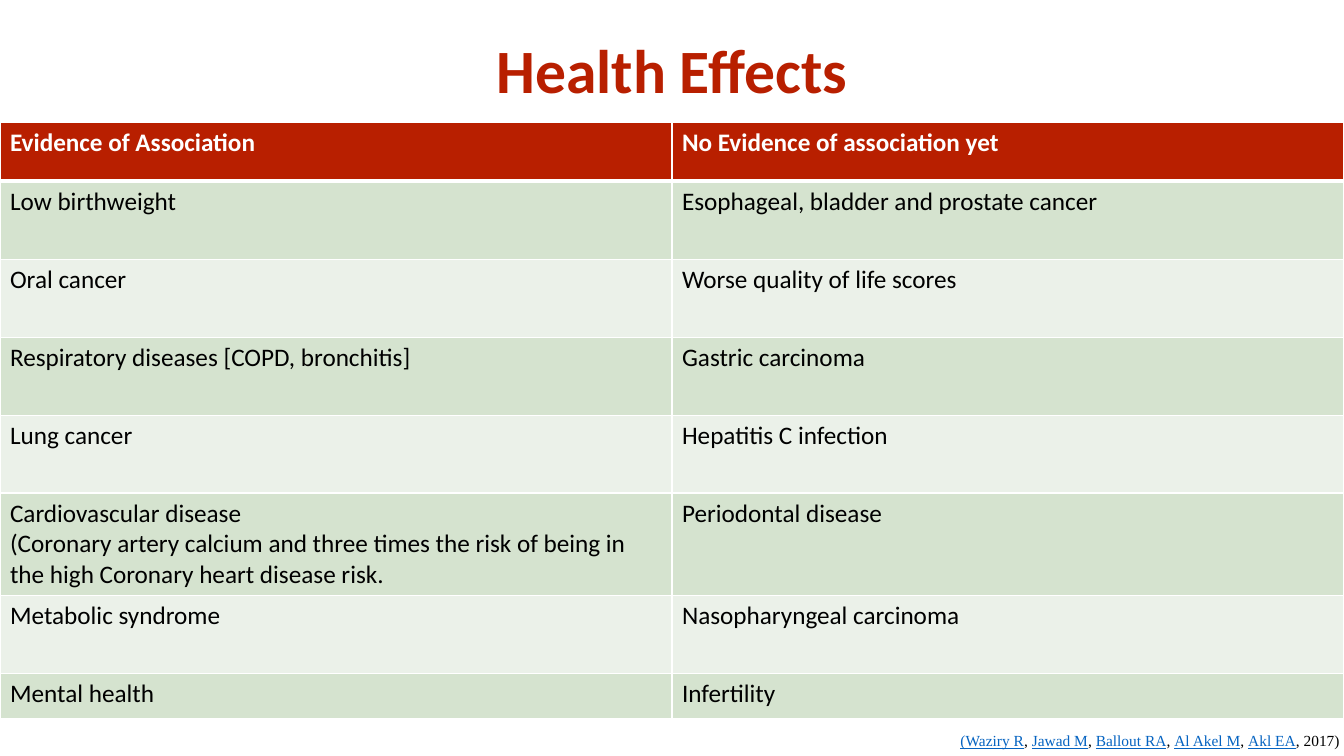
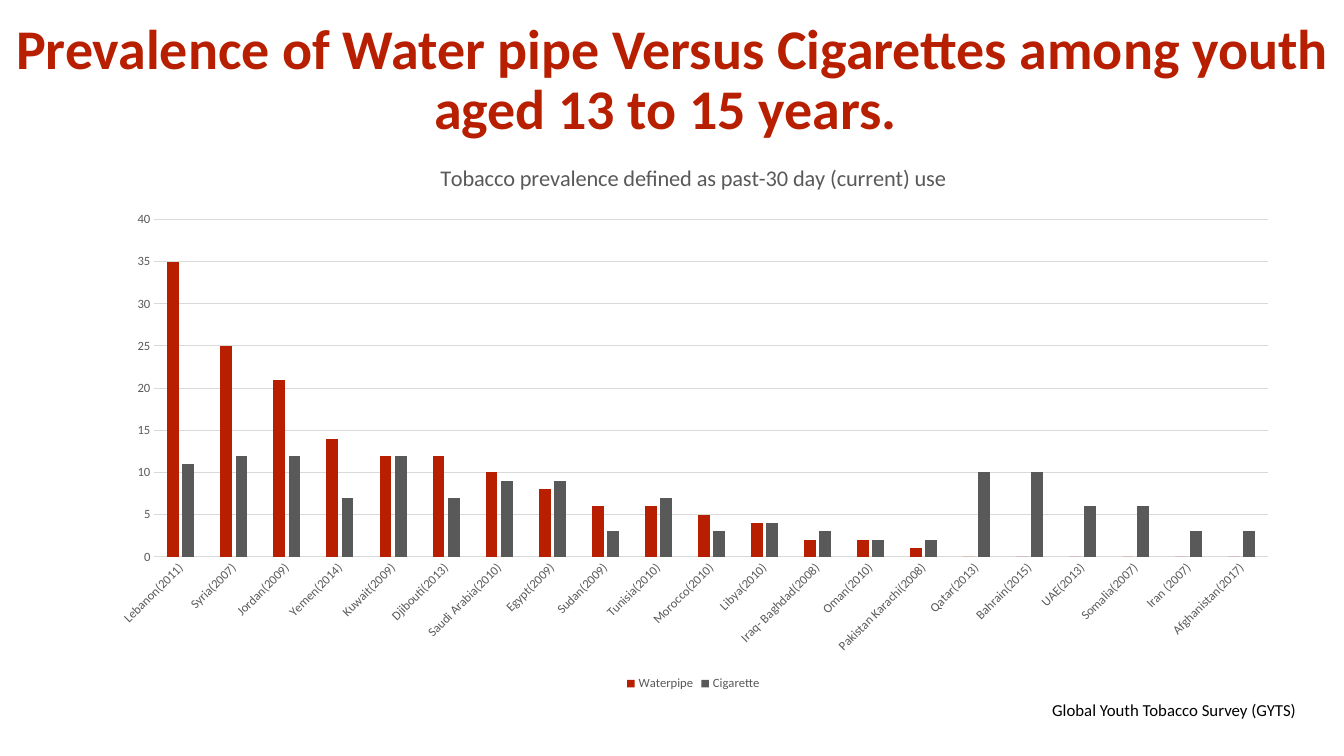
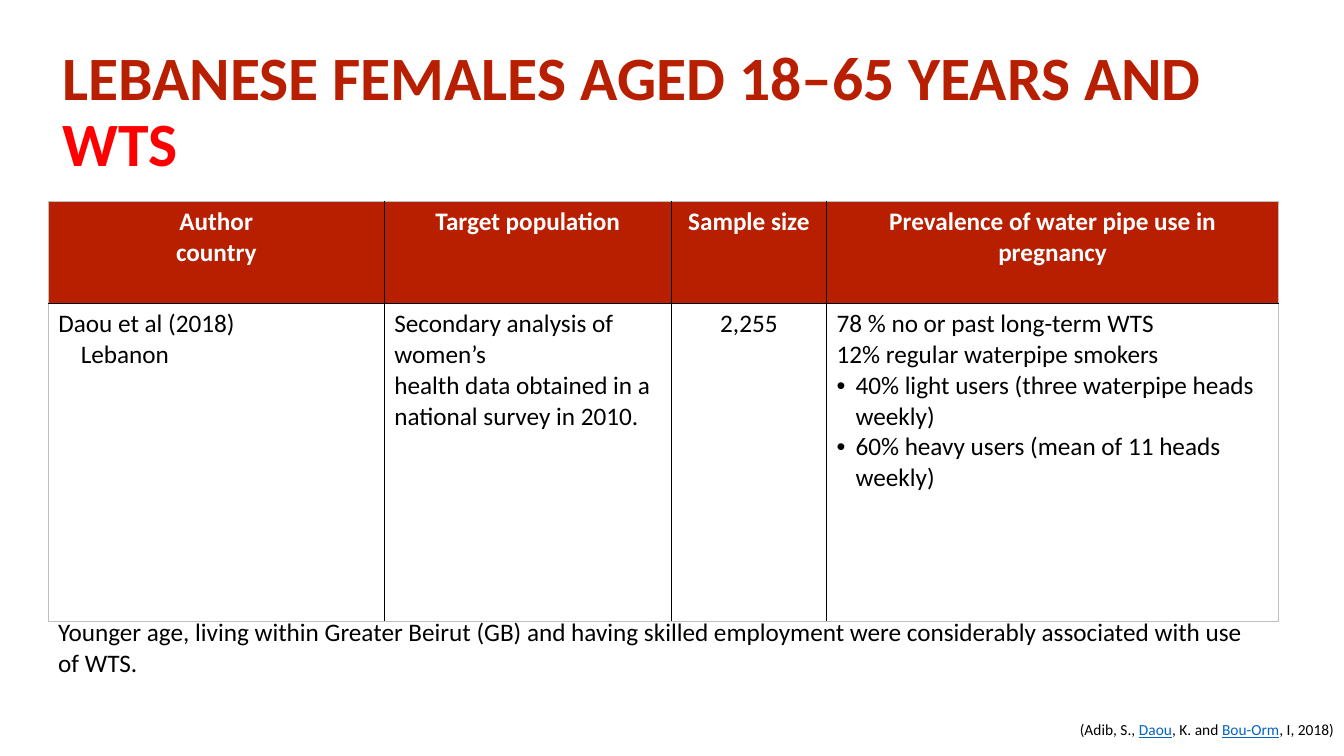
from lxml.etree import SubElement
from pptx import Presentation
from pptx.chart.data import CategoryChartData
from pptx.dml.color import RGBColor
from pptx.enum.chart import XL_CHART_TYPE as ChartType
from pptx.enum.chart import XL_LEGEND_POSITION as LegendPosition
from pptx.enum.chart import XL_TICK_MARK as TickMark
from pptx.enum.text import MSO_ANCHOR as Anchor
from pptx.enum.text import PP_ALIGN as Align
from pptx.oxml import parse_xml
from pptx.oxml.ns import nsdecls, qn
from pptx.util import Pt

COLORS = {
    "brand": "B81F00", "alert": "FF0000", "link": "0563C1",
    "text": "000000", "white": "FFFFFF", "gray": "595959",
    "grid": "D9D9D9", "frame": "BFBFBF",
    "band_dark": "D5E3CF", "band_light": "EBF1E9",
}
FONT, SERIF = "Calibri", "Times New Roman"
SLIDE_WIDTH, SLIDE_HEIGHT = 960, 540
TITLE_HEIGHT = 104.4

EFFECTS = [
    ("Evidence of Association", "No Evidence of association yet"),
    ("Low birthweight", "Esophageal, bladder and prostate cancer"),
    ("Oral cancer", "Worse quality of life scores"),
    ("Respiratory diseases [COPD, bronchitis]", "Gastric carcinoma"),
    ("Lung cancer", "Hepatitis C infection"),
    ("Cardiovascular disease\n(Coronary artery calcium and three times the risk "
     "of being in the high Coronary heart disease risk.", "Periodontal disease"),
    ("Metabolic syndrome", "Nasopharyngeal carcinoma"),
    ("Mental health", "Infertility"),
]
STUDY = [
    ("Author\ncountry", "Target population", "Sample size",
     "Prevalence of water pipe use in pregnancy"),
    ("Daou et al (2018)\nLebanon",
     "Secondary analysis of women’s\n"
     "health data obtained in a national survey in 2010.",
     "2,255",
     "78 % no or past long-term WTS\n12% regular waterpipe smokers\n"
     "40% light users (three waterpipe heads weekly)\n"
     "60% heavy users (mean of 11 heads weekly)"),
]
# Country and survey year, waterpipe, cigarette
PREVALENCE = [
    ("Lebanon(2011)", 35, 11), ("Syria(2007)", 25, 12), ("Jordan(2009)", 21, 12),
    ("Yemen(2014)", 14, 7), ("Kuwait(2009)", 12, 12), ("Djibouti(2013)", 12, 7),
    ("Saudi Arabia(2010)", 10, 9), ("Egypt(2009)", 8, 9), ("Sudan(2009)", 6, 3),
    ("Tunisia(2010)", 6, 7), ("Morocco(2010)", 5, 3), ("Libya(2010)", 4, 4),
    ("Iraq- Baghdad(2008)", 2, 3), ("Oman(2010)", 2, 2),
    ("Pakistan Karachi(2008)", 1, 2), ("Qatar(2013)", 0, 10),
    ("Bahrain(2015)", 0, 10), ("UAE(2013)", 0, 6), ("Somalia(2007)", 0, 6),
    ("Iran (2007)", 0, 3), ("Afghanistan(2017)", 0, 3),
]


def color(name):
    return RGBColor.from_string(COLORS[name])


def style_font(font, size, color_name, bold=False, name=FONT):
    font.name, font.size, font.bold = name, Pt(size), bold
    font.color.rgb = color(color_name)


def add_text(slide, box, runs, size, bold=False, align=Align.LEFT, name=FONT, wrap=True):
    """Place one paragraph; runs are (text, color name) pairs."""
    shape = slide.shapes.add_textbox(*map(Pt, box))
    shape.text_frame.word_wrap = wrap
    paragraph = shape.text_frame.paragraphs[0]
    paragraph.alignment = align
    for text, color_name in runs:
        run = paragraph.add_run()
        run.text = text
        style_font(run.font, size, color_name, bold, name)
        if color_name == "link":
            run.font.underline = True
    return shape


def add_title(slide, left, top, width, runs, size=44, align=Align.CENTER):
    shape = add_text(slide, (left, top, width, TITLE_HEIGHT), runs, size, True, align)
    shape.text_frame.vertical_anchor = Anchor.MIDDLE
    shape.text_frame.paragraphs[0].line_spacing = 0.9


def set_borders(cell, edges):
    """Draw the left, right, top and bottom edges as (color name, width)."""
    properties = cell._tc.get_or_add_tcPr()
    for index, (side, (color_name, width)) in enumerate(zip("LRTB", edges)):
        properties.insert(index, parse_xml(
            f'<a:ln{side} {nsdecls("a")} w="{Pt(width)}"><a:solidFill>'
            f'<a:srgbClr val="{COLORS[color_name]}"/></a:solidFill></a:ln{side}>'))


def add_table(slide, left, top, widths, heights, rows, bands, edges_of):
    """Fill a table with a brand header row and repeating body bands."""
    box = map(Pt, (left, top, sum(widths), sum(heights)))
    table = slide.shapes.add_table(len(rows), len(widths), *box).table
    table.horz_banding = False
    for column, width in zip(table.columns, widths):
        column.width = Pt(width)
    for row_index, (row, height) in enumerate(zip(rows, heights)):
        table.rows[row_index].height = Pt(height)
        header = row_index == 0
        fill = "brand" if header else bands[(row_index - 1) % len(bands)]
        for column_index, text in enumerate(row):
            cell = table.cell(row_index, column_index)
            cell.fill.solid()
            cell.fill.fore_color.rgb = color(fill)
            set_borders(cell, edges_of(row_index, column_index))
            cell.text_frame.text = text
            for paragraph in cell.text_frame.paragraphs:
                for run in paragraph.runs:
                    style_font(run.font, 18, "white" if header else "text", header)
    return table


def set_indent(paragraph, margin, indent=0, bullet=None):
    properties = paragraph._p.get_or_add_pPr()
    properties.set("marL", str(Pt(margin)))
    properties.set("indent", str(Pt(indent)))
    if bullet:
        SubElement(properties, qn("a:buFont")).set("typeface", "Arial")
        SubElement(properties, qn("a:buChar")).set("char", bullet)


def add_prevalence_chart(slide, box):
    data = CategoryChartData()
    names, waterpipe, cigarette = zip(*PREVALENCE)
    data.categories = names
    data.add_series("Waterpipe", waterpipe)
    data.add_series("Cigarette", cigarette)
    frame = slide.shapes.add_chart(ChartType.COLUMN_CLUSTERED, *map(Pt, box), data)
    chart = frame.chart
    style_font(chart.font, 10, "text")

    # Title and legend
    title = chart.chart_title
    title.text_frame.text = "Tobacco prevalence defined as past-30 day (current) use"
    style_font(title.text_frame.paragraphs[0].runs[0].font, 16, "gray")
    title.include_in_layout = False
    chart.has_legend = True
    chart.legend.position = LegendPosition.BOTTOM
    chart.legend.include_in_layout = False
    style_font(chart.legend.font, 9, "gray")

    # Columns
    plot = chart.plots[0]
    plot.gap_width, plot.overlap, plot.vary_by_categories = 219, -27, False
    for series, color_name in zip(plot.series, ("brand", "gray")):
        series.format.fill.solid()
        series.format.fill.fore_color.rgb = color(color_name)

    # Axes
    category_axis, value_axis = chart.category_axis, chart.value_axis
    for axis in (category_axis, value_axis):
        axis.major_tick_mark = axis.minor_tick_mark = TickMark.NONE
        style_font(axis.tick_labels.font, 9, "gray")
    category_axis._element.find(qn("c:txPr")).find(qn("a:bodyPr")).set("rot", "-2700000")
    value_axis.minimum_scale, value_axis.maximum_scale = 0, 40
    value_axis.major_unit = 5
    value_axis.format.line.fill.background()
    for line in (category_axis.format.line, value_axis.major_gridlines.format.line):
        line.color.rgb = color("grid")
        line.width = Pt(0.75)

    # Plot area, as fractions of the chart
    plot_area = chart._chartSpace.chart.plotArea
    for layout in plot_area.findall(qn("c:layout")):
        plot_area.remove(layout)
    fractions = "".join(f'<c:{key} val="{value}"/>' for key, value in
                        (("x", 0.05), ("y", 0.14), ("w", 0.93), ("h", 0.61)))
    plot_area.insert(0, parse_xml(
        f'<c:layout {nsdecls("c")}><c:manualLayout><c:layoutTarget val="inner"/>'
        f'<c:xMode val="edge"/><c:yMode val="edge"/>{fractions}'
        '</c:manualLayout></c:layout>'))


def build_effects(slide):
    add_title(slide, 0, 0, SLIDE_WIDTH, [("Health Effects", "brand")])

    def edges_of(row, column):
        thin, thick = ("white", 1), ("white", 3)
        return thin, thin, thick if row == 1 else thin, thick if row == 0 else thin

    heights = [42, 55.7, 55.7, 55.7, 55.7, 73, 55.7, 32.4]
    add_table(slide, 0, 87.5, [SLIDE_WIDTH / 2] * 2, heights, EFFECTS,
              ("band_dark", "band_light"), edges_of)

    # Citation, with linked author names
    authors = ["(Waziry R", "Jawad M", "Ballout RA", "Al Akel M", "Akl EA"]
    runs = [run for author in authors for run in ((author, "link"), (", ", "text"))]
    runs[-1] = (", 2017)", "text")
    add_text(slide, (679, 519, 288, 21), runs, 11, name=SERIF, wrap=False)


def build_prevalence(slide):
    add_title(slide, 0, 6, SLIDE_WIDTH, [
        ("Prevalence of Water pipe Versus Cigarettes among youth "
         "aged 13 to 15 years. ", "brand")], 40)
    add_text(slide, (744.5, 496, 191.5, 44),
             [("Global Youth Tobacco Survey (GYTS)", "text")], 12)
    add_prevalence_chart(slide, (67.5, 101.5, 855.5, 395))


def build_study(slide):
    add_title(slide, 37.5, 29, 917, [
        ("LEBANESE FEMALES AGED 18–65\u00a0YEARS AND ", "brand"), ("WTS", "alert")],
        align=Align.LEFT)

    def edges_of(row, column):
        outer = (column == 0, column == 3, row == 0, row == 1)
        return [("frame" if is_outer else "text", 1) for is_outer in outer]

    left, widths = 34.5, [240, 205, 111, 323]
    table = add_table(slide, left, 144, widths, [73, 227], STUDY, ("white",), edges_of)

    # Centred header and sample size, indented country, bulleted user groups
    for cell in [*table.rows[0].cells, table.cell(1, 2)]:
        for paragraph in cell.text_frame.paragraphs:
            paragraph.alignment = Align.CENTER
    set_indent(table.cell(1, 0).text_frame.paragraphs[1], 16)
    for paragraph in table.cell(1, 3).text_frame.paragraphs[2:]:
        set_indent(paragraph, 13.5, -13.5, "•")

    # Finding and citation
    add_text(slide, (left, 437, sum(widths), 51), [
        ("Younger age, living within Greater Beirut (GB) and having skilled "
         "employment were considerably associated with use of WTS.", "text")], 18)
    add_text(slide, (762.5, 511, 197.5, 21), [
        ("(Adib, S., ", "text"), ("Daou", "link"), (", K. and ", "text"),
        ("Bou-Orm", "link"), (", I, 2018)", "text")], 11, align=Align.RIGHT, wrap=False)


def main():
    presentation = Presentation()
    presentation.slide_width, presentation.slide_height = Pt(SLIDE_WIDTH), Pt(SLIDE_HEIGHT)
    for build in (build_effects, build_prevalence, build_study):
        build(presentation.slides.add_slide(presentation.slide_layouts[6]))
    presentation.save("out.pptx")


if __name__ == "__main__":
    main()
